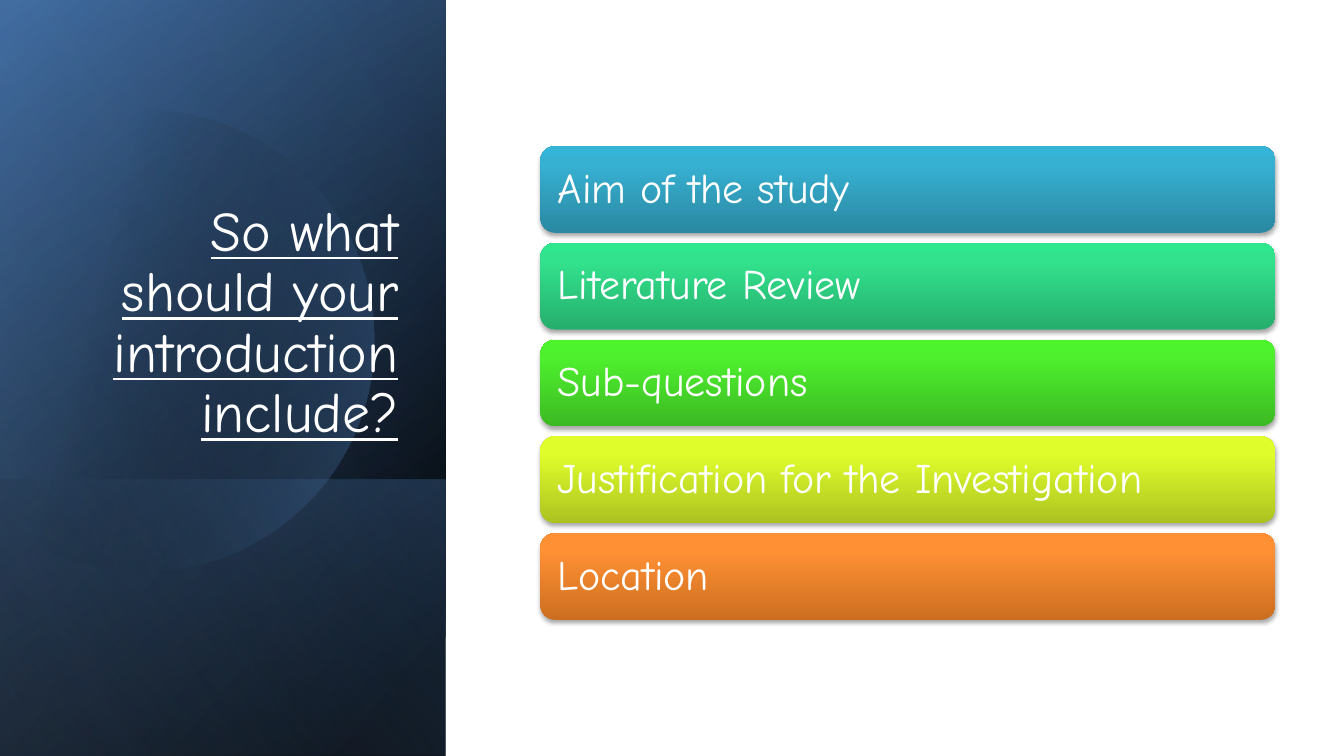
from math import cos, radians, sin

from pptx import Presentation
from pptx.dml.color import RGBColor
from pptx.enum.shapes import MSO_SHAPE as Preset
from pptx.enum.text import MSO_ANCHOR as Anchor, PP_ALIGN as Align
from pptx.oxml import parse_xml
from pptx.oxml.ns import nsdecls, qn
from pptx.util import Pt

EMU_PER_PX = 9144
SLIDE_WIDTH, SLIDE_HEIGHT = 1333, 750
PANEL_WIDTH = 442

PANEL_LAYERS = [
    (0, 750, 50, [(8, "000000", 100), (100, "376092", 100)]),
    (0, 750, 30, [(0, "000000", 0), (99, "4F81BD", 46)]),
    (476, 274, 130, [(2, "4F81BD", 29), (100, "000000", 30)]),
]
DISC_GLOW = [(29, "000000", 0), (100, "4F81BD", 43)]
PANEL_SHEEN = (0, 750, 120, [(0, "000000", 0), (99, "95B3D7", 11)])

SECTIONS = [
    ("Aim of the study", "2A88A2", "37B1D2", "34B4D6"),
    ("Literature Review", "26AE6D", "32E28D", "2EE68E"),
    ("Sub-questions", "3CB923", "4EF02E", "4CF52A"),
    ("Justification for the Investigation", "ACC321", "DFFD2B", "E1FF2B"),
    ("Location", "CC6E20", "FF9034", "FF9136"),
]
BAR_TOP, BAR_PITCH = 145, 96


def px(length):
    return round(length * EMU_PER_PX)


def color(hex_value):
    return RGBColor.from_string(hex_value)


class SlideBuilder:
    font = "Comic Neue"
    ink = "FFFFFF"

    def __init__(self, slide):
        self.shapes = slide.shapes

    def paint(self, shape, stops, angle):
        shape.shadow.inherit = False
        shape.line.fill.background()
        shape.fill.background()
        stop_xml = "".join(
            f'<a:gs pos="{position * 1000}"><a:srgbClr val="{color(tone)}">'
            f'<a:alpha val="{opacity * 1000}"/></a:srgbClr></a:gs>'
            for position, tone, opacity in stops
        )
        gradient = parse_xml(
            f'<a:gradFill {nsdecls("a")} rotWithShape="1"><a:gsLst>{stop_xml}</a:gsLst>'
            f'<a:lin ang="{angle * 60000}" scaled="0"/></a:gradFill>'
        )
        properties = shape._element.spPr
        properties.replace(properties.find(qn("a:noFill")), gradient)

    def panel_layer(self, top, height, angle, stops):
        left = (PANEL_WIDTH - height) / 2
        layer = self.shapes.add_shape(
            Preset.RECTANGLE, px(left), px(top - left), px(height), px(PANEL_WIDTH)
        )
        layer.rotation = 90
        layer._element.spPr.find(qn("a:xfrm")).set("flipH", "1")
        self.paint(layer, stops, angle)

    def disc(self, center_x, center_y, radius, half_sweep, angle, stops):
        rim = [
            (px(center_x + radius * cos(radians(turn))),
             px(center_y + radius * sin(radians(turn))))
            for turn in range(-half_sweep, half_sweep + 1, 2)
        ]
        outline = self.shapes.build_freeform(*rim[0])
        outline.add_line_segments(rim[1:], close=True)
        self.paint(outline.convert_to_shape(), stops, angle)

    def label(self, shape, text, size, align, anchor, underline=False):
        frame = shape.text_frame
        frame.text = text
        frame.word_wrap = True
        frame.vertical_anchor = anchor
        paragraph = frame.paragraphs[0]
        paragraph.alignment = align
        paragraph.line_spacing = 0.9
        font = paragraph.runs[0].font
        font.name = self.font
        font.size = Pt(size)
        font.underline = underline
        font.color.rgb = color(self.ink)

    def title(self, text, left, top, width, height):
        heading = self.shapes.add_textbox(px(left), px(top), px(width), px(height))
        self.label(heading, text, 40, Align.RIGHT, Anchor.BOTTOM, underline=True)

    def bar(self, text, left, top, width, height, stops):
        bar = self.shapes.add_shape(
            Preset.ROUNDED_RECTANGLE, px(left), px(top), px(width), px(height)
        )
        self.paint(bar, stops, 270)
        bar._element.spPr.find(qn("a:effectLst")).append(parse_xml(
            f'<a:outerShdw {nsdecls("a")} blurRad="{Pt(3.1)}" dist="{Pt(1.8)}" '
            'dir="5400000" rotWithShape="0"><a:srgbClr val="000000">'
            '<a:alpha val="35000"/></a:srgbClr></a:outerShdw>'
        ))
        bar.text_frame.margin_left = bar.text_frame.margin_right = px(13)
        self.label(bar, text, 30, Align.LEFT, Anchor.MIDDLE)


def main():
    deck = Presentation()
    deck.slide_width, deck.slide_height = px(SLIDE_WIDTH), px(SLIDE_HEIGHT)
    builder = SlideBuilder(deck.slides.add_slide(deck.slide_layouts[6]))

    for layer in PANEL_LAYERS:
        builder.panel_layer(*layer)
    builder.disc(142, 338, 229, 128, 14, DISC_GLOW)
    builder.panel_layer(*PANEL_SHEEN)
    builder.title("So what should your introduction include?", 64, 184, 341, 262)

    for row, (section, dark, middle, light) in enumerate(SECTIONS):
        stops = [(0, dark, 100), (80, middle, 100), (100, light, 100)]
        builder.bar(section, 536, BAR_TOP + row * BAR_PITCH, 729, 86, stops)

    deck.save("out.pptx")


if __name__ == "__main__":
    main()
